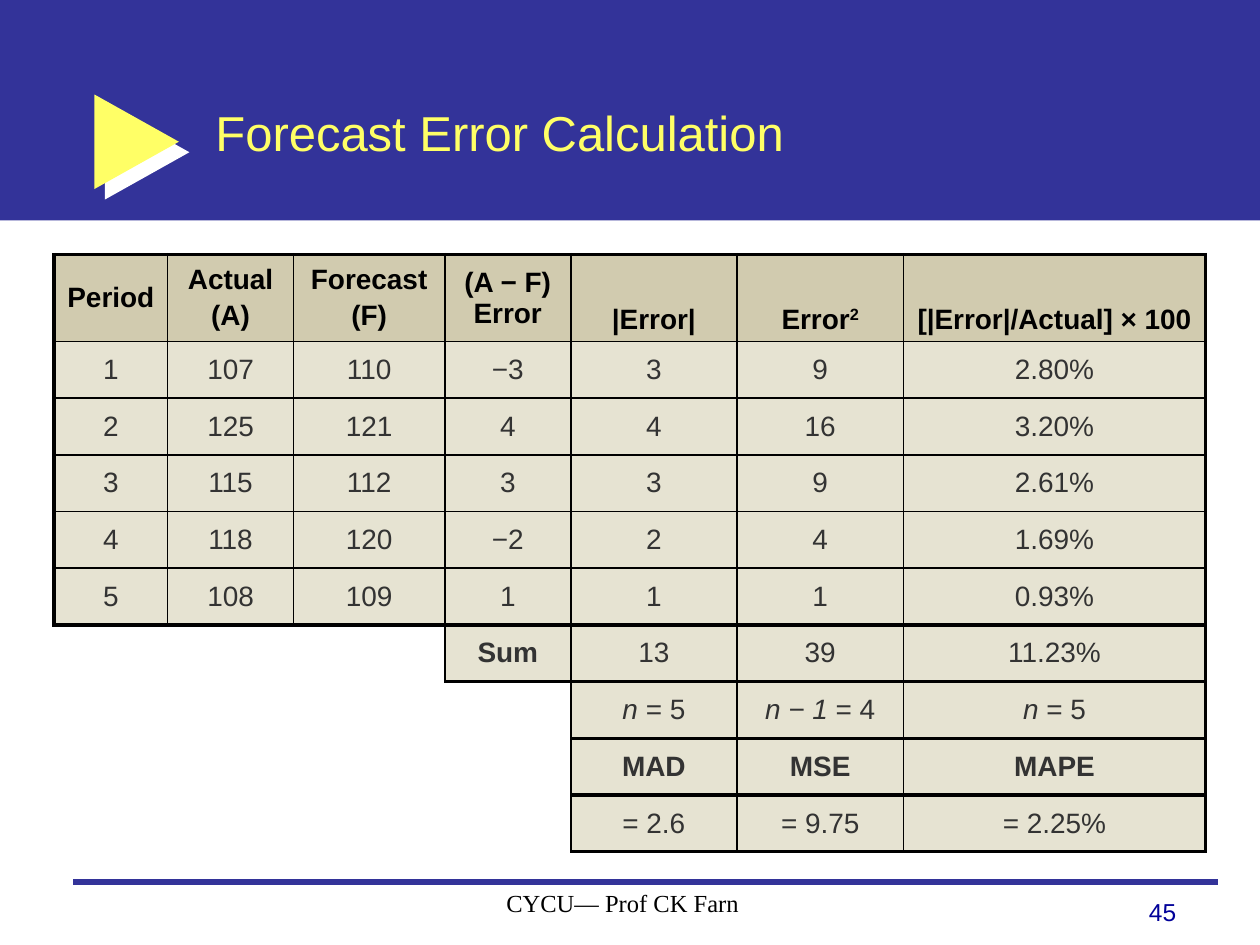
from dataclasses import dataclass

from lxml.etree import SubElement
from pptx import Presentation
from pptx.dml.color import RGBColor
from pptx.enum.shapes import MSO_CONNECTOR, MSO_SHAPE
from pptx.enum.text import MSO_ANCHOR as Anchor, PP_ALIGN as Align
from pptx.oxml.ns import qn
from pptx.util import Inches, Pt

COLORS = {
    "band": "333399", "accent": "FFFF66", "header": "D1CBAF", "cell": "E6E3D2",
    "ink": "333333", "black": "000000", "white": "FFFFFF", "number": "000099",
}
THIN, THICK = 1, 2.25


@dataclass(frozen=True)
class Span:
    text: str
    italic: bool = False
    superscript: bool = False


@dataclass(frozen=True)
class Label:
    text: str
    left: float
    top: float
    width: float
    font: str
    color: str


COLUMN_WIDTHS = [0.9, 1, 1.2, 1, 1.32, 1.32, 2.4]
HEADER_HEIGHT, ROW_HEIGHT = 0.69, 0.45
LAST_PERIOD_ROW = 5
BOLD_TEXTS = {"Sum", "MAD", "MSE", "MAPE"}
N_IS_5 = [Span("n ", italic=True), Span("= 5")]

# A cell is a string (one paragraph per line), a list of spans, or None when blank.
ROWS = [
    ["Period", "Actual\n(A)", "Forecast\n(F)", "(A − F) Error", "|Error|",
     [Span("Error"), Span("2", superscript=True)], "[|Error|/Actual] × 100"],
    ["1", "107", "110", "−3", "3", "9", "2.80%"],
    ["2", "125", "121", "4", "4", "16", "3.20%"],
    ["3", "115", "112", "3", "3", "9", "2.61%"],
    ["4", "118", "120", "−2", "2", "4", "1.69%"],
    ["5", "108", "109", "1", "1", "1", "0.93%"],
    [None, None, None, "Sum", "13", "39", "11.23%"],
    [None] * 4 + [N_IS_5, [Span("n − 1 ", italic=True), Span("= 4")], N_IS_5],
    [None] * 4 + ["MAD", "MSE", "MAPE"],
    [None] * 4 + ["= 2.6", "= 9.75", "= 2.25%"],
]

LABELS = [
    Label("CYCU— Prof CK Farn", 3.92, 7, 3.17, "Times New Roman", "black"),
    Label("45", 9.02, 7.07, 0.43, "Arial", "number"),
]


def rgb(name: str) -> RGBColor:
    return RGBColor.from_string(COLORS[name])


def style_font(font, name: str, size: float, color: str, bold: bool = False) -> None:
    font.name, font.size, font.bold = name, Pt(size), bold
    font.color.rgb = rgb(color)


def is_filled(row: int, column: int) -> bool:
    inside = 0 <= row < len(ROWS) and 0 <= column < len(COLUMN_WIDTHS)
    return inside and ROWS[row][column] is not None


def set_borders(cell, row: int, column: int) -> None:
    """Rule every edge that touches a filled cell; thick outside and in the totals."""
    last_column = len(COLUMN_WIDTHS) - 1
    edges = [
        ("a:lnL", row, column - 1, column == 0),
        ("a:lnR", row, column + 1, column == last_column),
        ("a:lnT", row - 1, column, row == 0 or row > LAST_PERIOD_ROW),
        ("a:lnB", row + 1, column, row >= LAST_PERIOD_ROW),
    ]
    properties = cell._tc.get_or_add_tcPr()
    for tag, next_row, next_column, thick in edges:
        line = SubElement(properties, qn(tag))
        if is_filled(row, column) or is_filled(next_row, next_column):
            line.set("w", str(Pt(THICK if thick else THIN)))
            fill = SubElement(line, qn("a:solidFill"))
            SubElement(fill, qn("a:srgbClr")).set("val", COLORS["black"])
        else:
            SubElement(line, qn("a:noFill"))


def write_spans(para, spans: list[Span]) -> None:
    for span in spans:
        run = para.add_run()
        run.text = span.text
        run.font.italic = span.italic
        if span.superscript:
            run._r.get_or_add_rPr().set("baseline", "30000")


def fill_cell(cell, row: int, column: int) -> None:
    set_borders(cell, row, column)
    content = ROWS[row][column]
    if content is None:
        cell.fill.background()
        return
    is_header = row == 0
    cell.fill.solid()
    cell.fill.fore_color.rgb = rgb("header" if is_header else "cell")
    cell.vertical_anchor = Anchor.BOTTOM if is_header and column > 3 else Anchor.MIDDLE
    frame = cell.text_frame
    if isinstance(content, str):
        frame.text = content
    else:
        write_spans(frame.paragraphs[0], content)
    bold = is_header or (isinstance(content, str) and content in BOLD_TEXTS)
    for index, para in enumerate(frame.paragraphs):
        para.alignment = Align.CENTER
        para.space_before = Pt(3 if index else 0)
        for run in para.runs:
            style_font(run.font, "Arial", 16, "black" if is_header else "ink", bold)


def add_error_table(page) -> None:
    height = HEADER_HEIGHT + ROW_HEIGHT * (len(ROWS) - 1)
    table = page.shapes.add_table(
        len(ROWS), len(COLUMN_WIDTHS), Inches(0.43), Inches(2.02),
        Inches(sum(COLUMN_WIDTHS)), Inches(height)).table
    table.first_row = table.horz_banding = False
    for column, width in zip(table.columns, COLUMN_WIDTHS):
        column.width = Inches(width)
    for row_index, row in enumerate(table.rows):
        row.height = Inches(ROW_HEIGHT if row_index else HEADER_HEIGHT)
        for column_index, cell in enumerate(row.cells):
            fill_cell(cell, row_index, column_index)


def add_plain_shape(page, kind, left: float, top: float, width: float,
                    height: float, color: str):
    shape = page.shapes.add_shape(
        kind, Inches(left), Inches(top), Inches(width), Inches(height))
    shape.shadow.inherit = False
    shape.fill.solid()
    shape.fill.fore_color.rgb = rgb(color)
    shape.line.fill.background()
    return shape


def add_title_arrow(page) -> None:
    arrow = add_plain_shape(page, MSO_SHAPE.RIGHT_ARROW, 0.75, 0.75, 0.67, 0.75, "accent")
    arrow.adjustments[0], arrow.adjustments[1] = 0.38, 1
    effects = arrow._element.spPr.find(qn("a:effectLst"))
    shadow = SubElement(effects, qn("a:outerShdw"), dist=str(Pt(8.5)),
                        dir=str(45 * 60000), algn="ctr", rotWithShape="0")
    SubElement(shadow, qn("a:srgbClr")).set("val", COLORS["white"])


def add_footer_rule(page) -> None:
    rule = page.shapes.add_connector(
        MSO_CONNECTOR.STRAIGHT, Inches(0.58), Inches(7), Inches(9.67), Inches(7))
    rule.line.color.rgb = rgb("band")
    rule.line.width = Pt(3)
    SubElement(rule._element.spPr, qn("a:effectLst"))


def set_title(page, text: str) -> None:
    title = page.shapes.title
    title.left, title.top = Inches(1.61), Inches(0.52)
    title.width, title.height = Inches(7.07), Inches(1.05)
    title.text_frame.text = text
    title.text_frame.vertical_anchor = Anchor.MIDDLE
    para = title.text_frame.paragraphs[0]
    para.alignment = Align.LEFT
    style_font(para.runs[0].font, "Arial", 28, "accent")


def add_label(page, label: Label) -> None:
    box = page.shapes.add_textbox(
        Inches(label.left), Inches(label.top), Inches(label.width), Inches(0.5))
    frame = box.text_frame
    frame.word_wrap = True
    frame.margin_right = 0
    frame.text = label.text
    style_font(frame.paragraphs[0].runs[0].font, label.font, 14, label.color)


def main() -> None:
    deck = Presentation()
    deck.slide_width, deck.slide_height = Inches(10), Inches(7.5)
    page = deck.slides.add_slide(deck.slide_layouts[5])
    band = add_plain_shape(page, MSO_SHAPE.RECTANGLE, 0, 0, 10, 1.75, "band")
    page.shapes.title._element.addprevious(band._element)
    add_title_arrow(page)
    add_footer_rule(page)
    set_title(page, "Forecast Error Calculation")
    add_error_table(page)
    for label in LABELS:
        add_label(page, label)
    deck.save("out.pptx")


if __name__ == "__main__":
    main()
